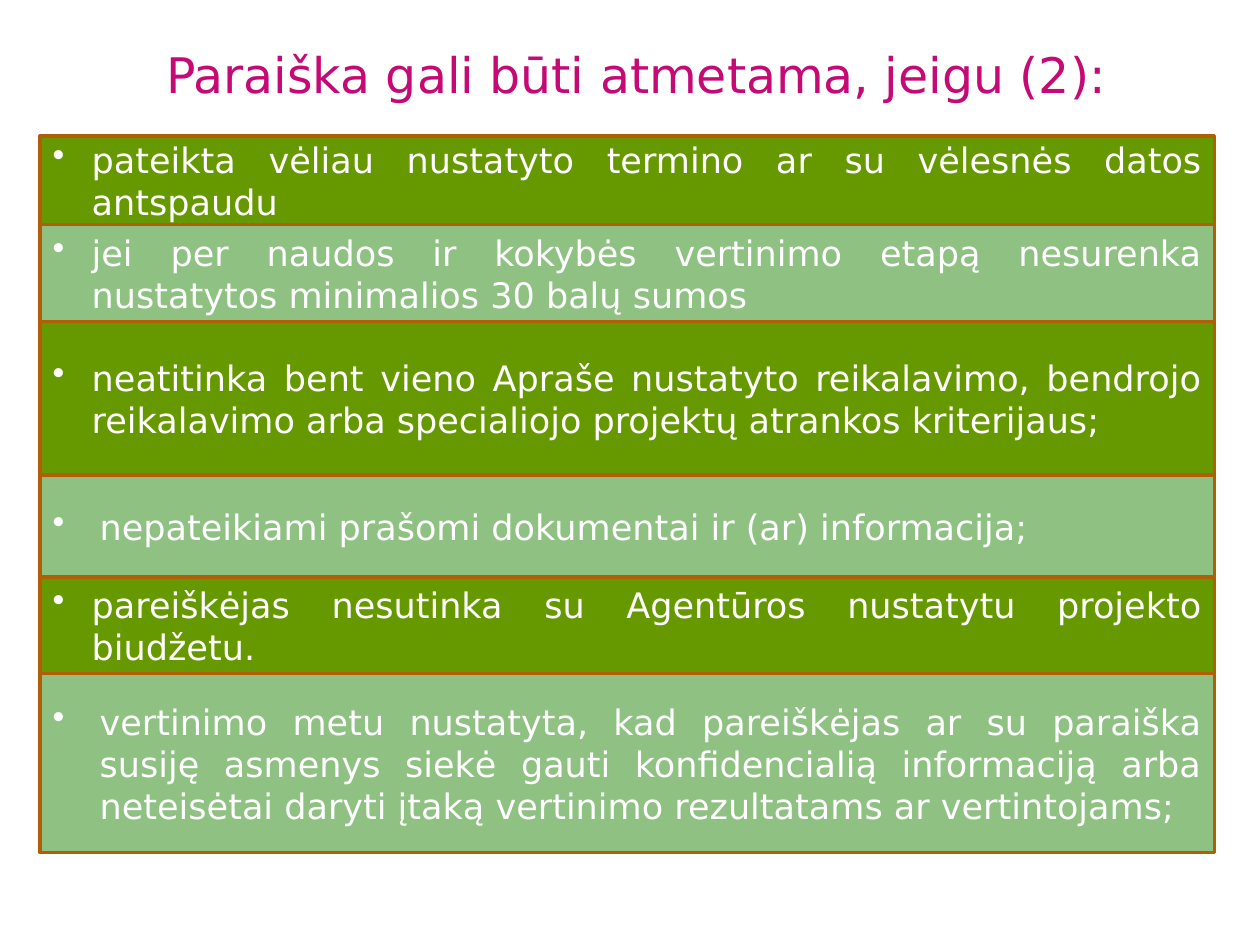
import dataclasses

import pptx
import pptx.dml.color
import pptx.enum.shapes
import pptx.enum.text
import pptx.oxml.ns
import pptx.util
from lxml import etree

Cm = pptx.util.Cm
Pt = pptx.util.Pt
Align = pptx.enum.text.PP_ALIGN
Anchor = pptx.enum.text.MSO_ANCHOR


@dataclasses.dataclass(frozen=True)
class Theme:
    font: str = "DejaVu Sans"
    title_size: int = 28
    reason_size: int = 20
    title_color: str = "C60A75"
    reason_color: str = "FFFFFF"
    border: str = "B25E07"
    bands: tuple = ("669900", "8EC182")


THEME = Theme()
LEFT = 0.81
TITLE_TOP, TITLE_WIDTH, TITLE_HEIGHT = 0.66, 24.03, 2.24
BAND_TOP, BAND_WIDTH = 2.74, 23.67

TITLE = "Paraiška gali būti atmetama, jeigu (2):"
REASONS = [
    ("pateikta vėliau nustatyto termino ar su vėlesnės datos antspaudu",
     1.79, 0.79, Align.JUSTIFY),
    ("jei per naudos ir kokybės vertinimo etapą nesurenka nustatytos "
     "minimalios 30 balų sumos", 1.95, 0.79, Align.JUSTIFY),
    ("neatitinka bent vieno Apraše nustatyto reikalavimo, bendrojo "
     "reikalavimo arba specialiojo projektų atrankos kriterijaus;",
     3.1, 0.79, Align.JUSTIFY),
    ("nepateikiami prašomi dokumentai ir (ar) informacija;",
     2.05, 0.95, Align.LEFT),
    ("pareiškėjas nesutinka su Agentūros nustatytu projekto biudžetu.",
     1.95, 0.79, Align.JUSTIFY),
    ("vertinimo metu nustatyta, kad pareiškėjas ar su paraiška susiję "
     "asmenys siekė gauti konfidencialią informaciją arba neteisėtai daryti "
     "įtaką vertinimo rezultatams ar vertintojams;",
     3.61, 0.95, Align.JUSTIFY),
]


def rgb(code):
    return pptx.dml.color.RGBColor.from_string(code)


def add_bullet(paragraph, indent):
    properties = paragraph._p.get_or_add_pPr()
    properties.set("marL", str(Cm(indent)))
    properties.set("indent", str(-Cm(indent)))
    bullet = etree.SubElement(properties, pptx.oxml.ns.qn("a:buChar"))
    bullet.set("char", "•")


def write_text(frame, text, *, size, color, align, anchor, indent=None):
    frame.word_wrap = True
    frame.vertical_anchor = anchor
    paragraph = frame.paragraphs[0]
    paragraph.alignment = align
    if indent is not None:
        add_bullet(paragraph, indent)
    run = paragraph.add_run()
    run.text = text
    run.font.name = THEME.font
    run.font.size = Pt(size)
    run.font.color.rgb = rgb(color)


def add_title(slide):
    title = slide.shapes.add_textbox(
        Cm(LEFT), Cm(TITLE_TOP), Cm(TITLE_WIDTH), Cm(TITLE_HEIGHT))
    title.text_frame.margin_top = Cm(0.23)
    write_text(title.text_frame, TITLE, size=THEME.title_size,
               color=THEME.title_color, align=Align.CENTER, anchor=Anchor.TOP)


def add_reason(slide, text, top, height, fill, indent, align):
    band = slide.shapes.add_shape(
        pptx.enum.shapes.MSO_SHAPE.RECTANGLE,
        Cm(LEFT), Cm(top), Cm(BAND_WIDTH), Cm(height))
    band.shadow.inherit = False
    band.fill.solid()
    band.fill.fore_color.rgb = rgb(fill)
    band.line.color.rgb = rgb(THEME.border)
    band.line.width = Pt(2)
    write_text(band.text_frame, text, size=THEME.reason_size,
               color=THEME.reason_color, align=align, anchor=Anchor.MIDDLE,
               indent=indent)


def main():
    deck = pptx.Presentation()
    deck.slide_width, deck.slide_height = Cm(25.4), Cm(19.05)
    slide = deck.slides.add_slide(deck.slide_layouts[6])
    add_title(slide)
    top = BAND_TOP
    for order, (text, height, indent, align) in enumerate(REASONS):
        fill = THEME.bands[order % len(THEME.bands)]
        add_reason(slide, text, top, height, fill, indent, align)
        top += height
    deck.save("out.pptx")


if __name__ == "__main__":
    main()
